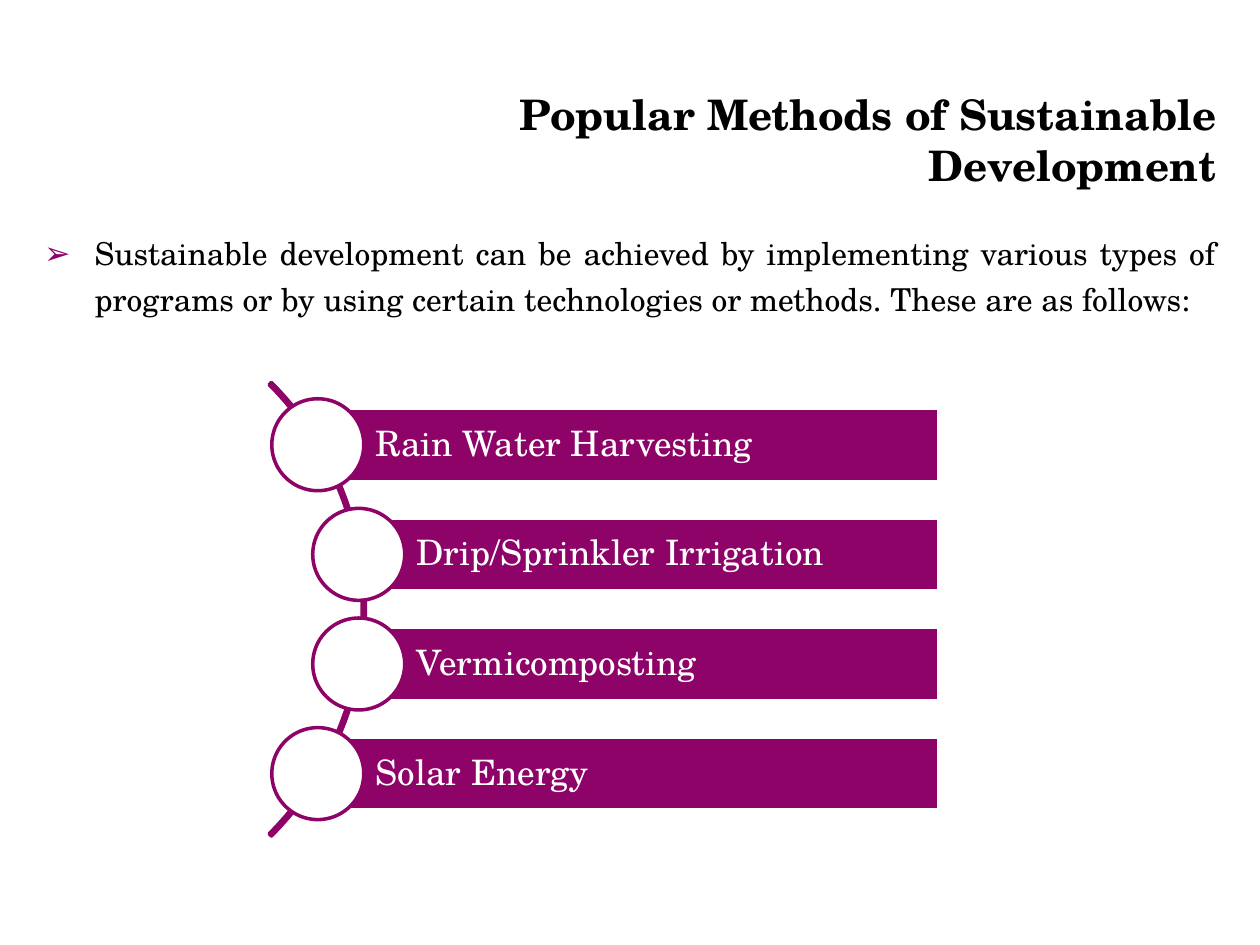
import math

from lxml import etree
from pptx import Presentation
from pptx import util as u
from pptx.dml.color import RGBColor
from pptx.enum import shapes, text
from pptx.oxml.ns import qn

BLACK = RGBColor(0x00, 0x00, 0x00)
WHITE = RGBColor(0xFF, 0xFF, 0xFF)
PLUM = RGBColor(0x8D, 0x03, 0x67)
FONT = "TeX Gyre Schola"

# The slide is a grid of 100 columns by 75 rows.
COLUMNS, ROWS = 100, 75
WIDTH, HEIGHT = u.Inches(10), u.Inches(7.5)

METHODS = ["Rain Water Harvesting", "Drip/Sprinkler Irrigation",
           "Vermicomposting", "Solar Energy"]
ARC_X, ARC_Y = 3.55, 48.35
ARC_SIZE = 50.9
NODE_RADIUS = 25.3
PITCH = 8.7
BAR_RIGHT, BAR_HEIGHT, CIRCLE = 74.5, 5.8, 7.3


def write(frame, words, size, color, bold=False, align=text.PP_ALIGN.LEFT,
          anchor=text.MSO_ANCHOR.MIDDLE, line_spacing=None, before=0, after=0):
    frame.word_wrap = True
    frame.auto_size = text.MSO_AUTO_SIZE.NONE
    frame.vertical_anchor = anchor
    paragraph = frame.paragraphs[0]
    paragraph.alignment = align
    paragraph.line_spacing = line_spacing
    paragraph.space_before = u.Pt(before)
    paragraph.space_after = u.Pt(after)
    run = paragraph.add_run()
    run.text = words
    run.font.name, run.font.size, run.font.bold = FONT, u.Pt(size), bold
    run.font.color.rgb = color
    return paragraph


def add_bullet(paragraph, mark, color, indent):
    properties = paragraph._p.get_or_add_pPr()
    properties.set("marL", str(indent))
    properties.set("indent", str(-indent))
    bullet_color = etree.SubElement(properties, qn("a:buClr"))
    etree.SubElement(bullet_color, qn("a:srgbClr"), val=str(color))
    etree.SubElement(properties, qn("a:buChar"), char=mark)


class MethodsSlide:
    """Holds the slide, its diagram group and the shared line style."""

    def __init__(self, deck, line_width=2):
        self.slide = deck.slides.add_slide(deck.slide_layouts[1])
        self.diagram = self.slide.shapes.add_group_shape()
        self.line_width = u.Pt(line_width)

    def box(self, left, top, width, height):
        """Turn columns and rows into lengths."""
        return (round(left * WIDTH / COLUMNS), round(top * HEIGHT / ROWS),
                round(width * WIDTH / COLUMNS), round(height * HEIGHT / ROWS))

    def fill_placeholder(self, index, place, words, **style):
        holder = self.slide.placeholders[index]
        holder.left, holder.top, holder.width, holder.height = self.box(*place)
        return write(holder.text_frame, words, **style)

    def shape(self, kind, place, line, fill=None):
        shape = self.diagram.shapes.add_shape(kind, *self.box(*place))
        shape.shadow.inherit = False
        shape.line.color.rgb = line
        shape.line.width = self.line_width
        if fill is None:
            shape.fill.background()
        else:
            shape.fill.solid()
            shape.fill.fore_color.rgb = fill
        return shape

    def arc(self, x, y, size):
        """Draw a thin arc spanning 45 degrees above and below the right."""
        arc = self.shape(shapes.MSO_SHAPE.BLOCK_ARC,
                         (x - size / 2, y - size / 2, size, size), PLUM)
        for index, value in enumerate((189, 27, 0.005)):
            arc.adjustments[index] = value

    def method(self, x, y, words):
        """Draw a labelled bar that starts behind a circle centred on x, y."""
        bar = self.shape(shapes.MSO_SHAPE.RECTANGLE,
                         (x, y - BAR_HEIGHT / 2, BAR_RIGHT - x, BAR_HEIGHT),
                         WHITE, PLUM)
        frame = bar.text_frame
        frame.margin_left = u.Inches(0.46)
        frame.margin_top = frame.margin_right = frame.margin_bottom = u.Inches(0.06)
        write(frame, words, size=20, color=WHITE, line_spacing=0.9, after=7)
        self.shape(shapes.MSO_SHAPE.OVAL,
                   (x - CIRCLE / 2, y - CIRCLE / 2, CIRCLE, CIRCLE), PLUM, WHITE)


def main():
    deck = Presentation()
    deck.slide_width, deck.slide_height = WIDTH, HEIGHT
    page = MethodsSlide(deck)

    page.fill_placeholder(
        0, (16.7, 7.3, 80.8, 7.5), "Popular Methods of Sustainable Development",
        size=24, color=BLACK, bold=True, align=text.PP_ALIGN.RIGHT)
    intro = page.fill_placeholder(
        1, (2.5, 17.5, 95, 52.5),
        "Sustainable development can be achieved by implementing various types "
        "of programs or by using certain technologies or methods. These are as "
        "follows:",
        size=18, color=BLACK, align=text.PP_ALIGN.JUSTIFY,
        anchor=text.MSO_ANCHOR.TOP, line_spacing=1.2, before=3)
    add_bullet(intro, "➢", PLUM, u.Inches(0.4))

    page.arc(ARC_X, ARC_Y, ARC_SIZE)
    for index, name in enumerate(METHODS):
        rise = (index - (len(METHODS) - 1) / 2) * PITCH
        reach = math.sqrt(NODE_RADIUS ** 2 - rise ** 2)
        page.method(ARC_X + reach, ARC_Y + rise, name)

    deck.save("out.pptx")


if __name__ == "__main__":
    main()
